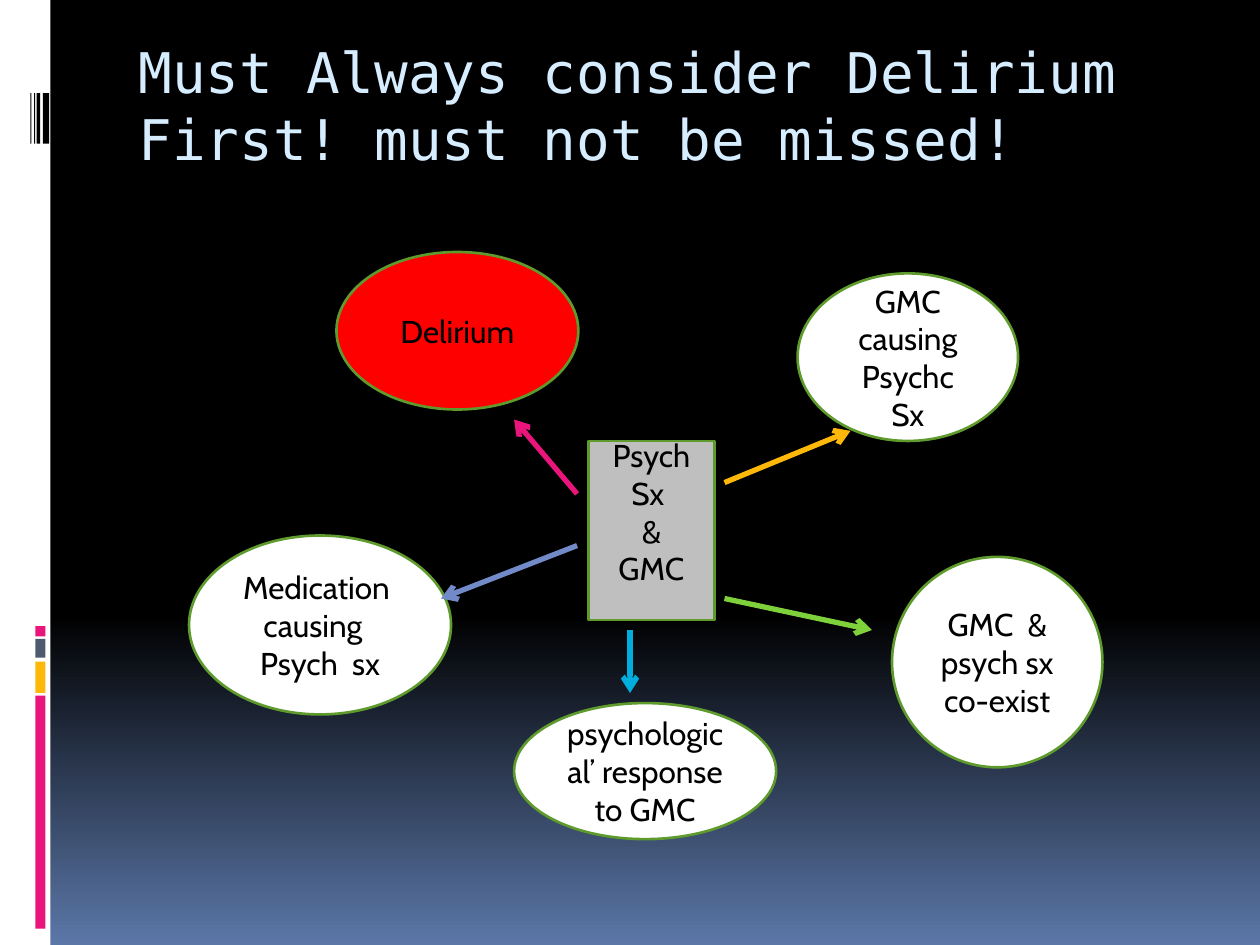
"""Build a slide linking psychiatric symptoms to their possible medical causes."""
from lxml.etree import SubElement
from pptx import Presentation
from pptx.dml.color import RGBColor
from pptx.enum.shapes import MSO_CONNECTOR, MSO_SHAPE
from pptx.enum.text import MSO_ANCHOR, PP_ALIGN
from pptx.oxml.ns import qn
from pptx.util import Inches, Pt

BLACK = RGBColor(0x00, 0x00, 0x00)
WHITE = RGBColor(0xFF, 0xFF, 0xFF)
RED = RGBColor(0xFF, 0x00, 0x00)
GREY = RGBColor(0xBF, 0xBF, 0xBF)
SLATE = RGBColor(0x4E, 0x5B, 0x6F)
STEEL = RGBColor(0x5B, 0x77, 0xA8)
PALE_BLUE = RGBColor(0xD6, 0xEC, 0xFF)
PINK = RGBColor(0xEA, 0x15, 0x7A)
AMBER = RGBColor(0xFE, 0xB8, 0x0A)
LIME = RGBColor(0x7F, 0xD1, 0x3B)
CYAN = RGBColor(0x00, 0xAD, 0xDC)
PERIWINKLE = RGBColor(0x73, 0x8A, 0xC8)
OUTLINE_GREEN = RGBColor(0x5E, 0x9B, 0x2C)


class SlideBuilder:
    title_font = "DejaVu Sans Mono"
    body_font = "Cabin"

    def __init__(self, page):
        self.page = page

    def background(self, top, bottom, start):
        fill = self.page.background.fill
        fill.gradient()
        fill.gradient_angle = 270
        for stop, color, position in zip(fill.gradient_stops, (top, bottom), (start, 1)):
            stop.color.rgb = color
            stop.position = position

    def shape(self, kind, bounds, color):
        shape = self.page.shapes.add_shape(kind, *map(Inches, bounds))
        shape.shadow.inherit = False
        shape.fill.solid()
        shape.fill.fore_color.rgb = color
        shape.line.fill.background()
        return shape

    def bar(self, bounds, color):
        self.shape(MSO_SHAPE.RECTANGLE, bounds, color)

    def set_text(self, frame, lines, font, size, color, align):
        frame.word_wrap = True
        frame.text = "\n".join(lines)
        for para in frame.paragraphs:
            para.alignment = align
            para.font.name = font
            para.font.size = Pt(size)
            para.font.color.rgb = color

    def title(self, bounds, text):
        box = self.page.shapes.add_textbox(*map(Inches, bounds))
        self.set_text(box.text_frame, [text], self.title_font, 32, PALE_BLUE, PP_ALIGN.LEFT)

    def node(self, kind, bounds, color, lines):
        node = self.shape(kind, bounds, color)
        node.line.color.rgb = OUTLINE_GREEN
        node.line.width = Pt(1.5)
        node.text_frame.vertical_anchor = MSO_ANCHOR.MIDDLE
        self.set_text(node.text_frame, lines, self.body_font, 18, BLACK, PP_ALIGN.CENTER)
        return node

    def arrow(self, start, end, color):
        arrow = self.page.shapes.add_connector(
            MSO_CONNECTOR.STRAIGHT, *map(Inches, start + end))
        arrow.line.color.rgb = color
        arrow.line.width = Pt(3)
        properties = arrow._element.spPr
        SubElement(properties.find(qn("a:ln")), qn("a:tailEnd"), type="arrow")
        SubElement(properties, qn("a:effectLst"))


def main():
    deck = Presentation()
    deck.slide_width, deck.slide_height = Inches(10), Inches(7.5)
    page = deck.slides.add_slide(deck.slide_layouts[6])
    builder = SlideBuilder(page)
    builder.background(BLACK, STEEL, 0.65)

    builder.bar((0, 0, 0.4, 7.5), WHITE)
    for top, height, color in ((5.52, 1.85, PINK), (5.25, 0.25, AMBER),
                               (5.07, 0.15, SLATE), (4.97, 0.08, PINK)):
        builder.bar((0.28, top, 0.08, height), color)
    for left, width in ((0.34, 0.05), (0.29, 0.03), (0.27, 0.01), (0.24, 0.01)):
        builder.bar((left, 0.74, width, 0.4), BLACK)

    builder.title((1, 0.25, 8.5, 1.83),
                  "Must Always consider Delirium First! must not be missed!")

    center = builder.node(MSO_SHAPE.RECTANGLE, (4.67, 3.5, 1, 1.42), GREY,
                          ["Psych Sx ", "&", "GMC"])
    center.text_frame.margin_top = 0
    center.text_frame.margin_bottom = Inches(0.3)

    causes = (
        ((6.33, 2.17, 1.75, 1.33), WHITE, ["GMC causing", "Psychc Sx"]),
        ((7.08, 4.42, 1.67, 1.67), WHITE, ["GMC  & psych sx", "co-exist"]),
        ((4.08, 5.58, 2.08, 1.08), WHITE, ["psychological’ response to GMC"]),
        ((1.5, 4.25, 2.08, 1.42), WHITE, ["Medication  causing  ", "Psych  sx"]),
        ((2.67, 2, 1.92, 1.25), RED, ["Delirium"]),
    )
    for bounds, color, lines in causes:
        builder.node(MSO_SHAPE.OVAL, bounds, color, lines)

    arrows = (
        ((5.75, 3.83), (6.75, 3.42), AMBER),
        ((5.75, 4.75), (6.92, 5), LIME),
        ((5, 5), (5, 5.5), CYAN),
        ((4.58, 4.33), (3.5, 4.75), PERIWINKLE),
        ((4.58, 3.92), (4.08, 3.33), PINK),
    )
    for start, end, color in arrows:
        builder.arrow(start, end, color)

    deck.save("out.pptx")


if __name__ == "__main__":
    main()
